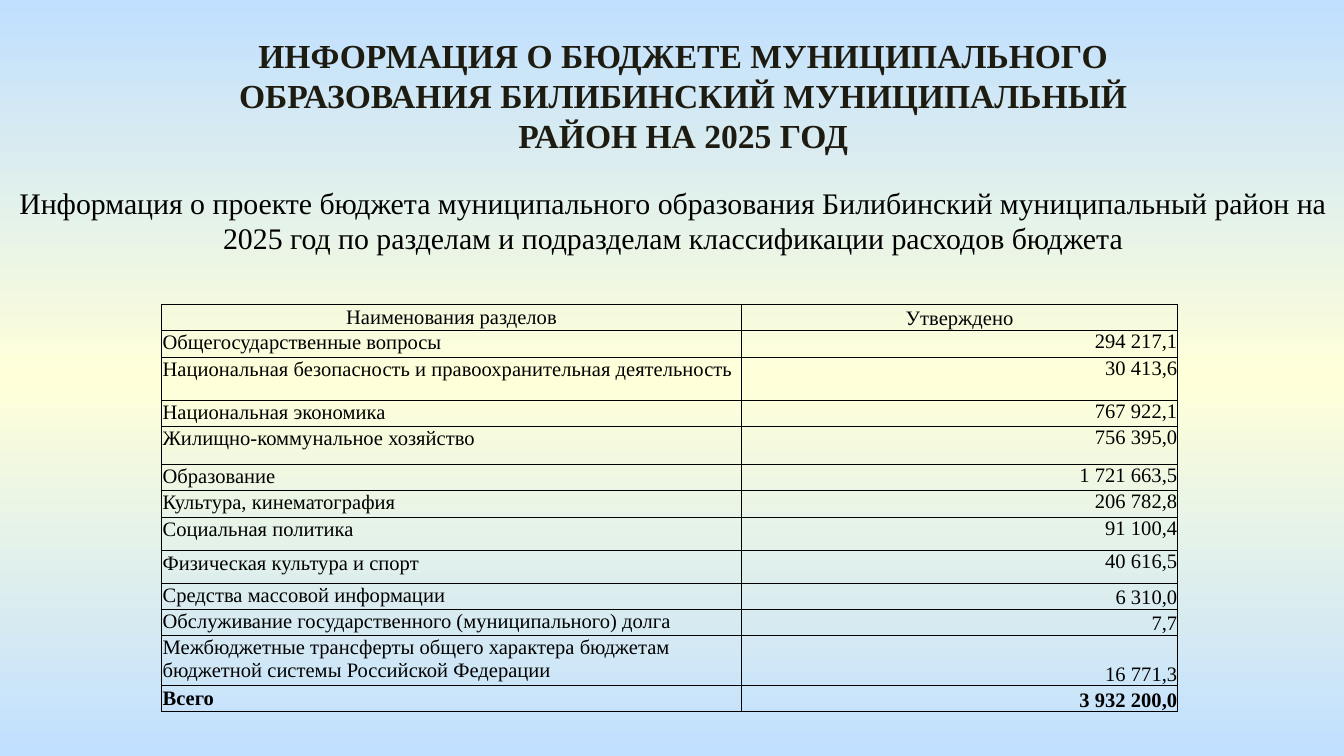
from pptx import Presentation
from pptx.dml.color import RGBColor
from pptx.enum.text import MSO_ANCHOR, MSO_AUTO_SIZE, PP_ALIGN
from pptx.oxml.ns import qn
from pptx.util import Inches, Pt
from lxml import etree

LEFT, MID, RIGHT = PP_ALIGN.LEFT, PP_ALIGN.CENTER, PP_ALIGN.RIGHT
TOP, CORE, BASE = MSO_ANCHOR.TOP, MSO_ANCHOR.MIDDLE, MSO_ANCHOR.BOTTOM
GROW = MSO_AUTO_SIZE.SHAPE_TO_FIT_TEXT
HUES = {"sky": "C1E0FF", "cream": "FFFFD9", "title": "1E1C11", "ink": "000000"}
EDGES = ("a:lnL", "a:lnR", "a:lnT", "a:lnB")

HEADS = ("Наименования разделов", "Утверждено")
ROWS = [
    ("Общегосударственные вопросы", "294 217,1", 0.036, TOP),
    ("Национальная безопасность и правоохранительная деятельность", "30 413,6", 0.057, TOP),
    ("Национальная экономика", "767 922,1", 0.033, TOP),
    ("Жилищно-коммунальное хозяйство", "756 395,0", 0.05, TOP),
    ("Образование", "1 721 663,5", 0.034, TOP),
    ("Культура, кинематография", "206 782,8", 0.036, TOP),
    ("Социальная политика", "91 100,4", 0.044, TOP),
    ("Физическая культура и спорт", "40 616,5", 0.043, TOP),
    ("Средства массовой информации", "6 310,0", 0.034, BASE),
    ("Обслуживание государственного (муниципального) долга", "7,7", 0.033, BASE),
    ("Межбюджетные трансферты общего характера бюджетам бюджетной системы "
     "Российской Федерации", "16 771,3", 0.034, BASE),
    ("Всего", "3 932 200,0", 0.033, BASE),
]


class Deck:
    face = "Times New Roman"

    def __init__(self, wide, high):
        self.prs = Presentation()
        self.prs.slide_width, self.prs.slide_height = Inches(wide), Inches(high)
        self.slide = self.prs.slides.add_slide(self.prs.slide_layouts[6])

    def x(self, share):
        return round(share * self.prs.slide_width)

    def y(self, share):
        return round(share * self.prs.slide_height)

    def back(self, hues):
        fill = self.slide.background.fill
        fill.gradient()
        fill.gradient_angle = 270
        stops = next(self.slide.element.iter(qn("a:gsLst")))
        for old in list(stops):
            stops.remove(old)
        for i, hue in enumerate(hues):
            pos = 100000 * i // (len(hues) - 1)
            stop = etree.SubElement(stops, qn("a:gs"), pos=str(pos))
            etree.SubElement(stop, qn("a:srgbClr"), val=HUES[hue])

    def label(self, frame, text, size, hue="ink", align=MID, bold=False):
        frame.word_wrap = True
        par = frame.paragraphs[0]
        par.text, par.alignment = text, align
        font = par.font
        font.name, font.size, font.bold = self.face, Pt(size), bold
        font.color.rgb = RGBColor.from_string(HUES[hue])

    def text(self, left, top, wide, high, words, size, hue="ink", bold=False):
        box = self.slide.shapes.add_textbox(
            self.x(left), self.y(top), self.x(wide), self.y(high))
        self.label(box.text_frame, words, size, hue, bold=bold)
        box.text_frame.auto_size = GROW

    def cell(self, cell, words, align, anchor, pad, bold=False):
        cell.margin_left = cell.margin_top = cell.margin_right = Inches(pad)
        cell.margin_bottom = 0
        cell.vertical_anchor = anchor
        self.label(cell.text_frame, words, 11, align=align, bold=bold)
        props = cell._tc.get_or_add_tcPr()
        for edge in EDGES:
            line = etree.SubElement(props, qn(edge), w=str(Pt(0.5)))
            fill = etree.SubElement(line, qn("a:solidFill"))
            etree.SubElement(fill, qn("a:srgbClr"), val=HUES["ink"])
        cell.fill.background()

    def table(self, left, top, cols, heads, rows):
        highs = [0.033] + [row[2] for row in rows]
        grid = self.slide.shapes.add_table(
            len(highs), len(cols), self.x(left), self.y(top),
            self.x(sum(cols)), self.y(sum(highs))).table
        grid.first_row = grid.horz_banding = False
        for col, wide in zip(grid.columns, cols):
            col.width = self.x(wide)
        for row, high in zip(grid.rows, highs):
            row.height = self.y(high)
        for i, (head, anchor) in enumerate(zip(heads, (CORE, BASE))):
            self.cell(grid.cell(0, i), head, MID, anchor, 0.01)
        for i, (name, total, _, anchor) in enumerate(rows, 1):
            bold = i == len(rows)
            self.cell(grid.cell(i, 0), name, LEFT, TOP, 0.01, bold)
            self.cell(grid.cell(i, 1), total, RIGHT, anchor, 0, bold)


def main():
    deck = Deck(10, 5.625)
    deck.back(("sky", "cream", "sky"))
    deck.text(0.122, 0.037, 0.773, 0.18,
              "ИНФОРМАЦИЯ О БЮДЖЕТЕ МУНИЦИПАЛЬНОГО ОБРАЗОВАНИЯ БИЛИБИНСКИЙ "
              "МУНИЦИПАЛЬНЫЙ РАЙОН НА 2025 ГОД", 18, "title", True)
    deck.text(0.001, 0.235, 1, 0.114,
              "Информация о проекте бюджета муниципального образования Билибинский "
              "муниципальный район на 2025 год по разделам и подразделам "
              "классификации расходов бюджета", 16)
    deck.table(0.12, 0.402, (0.432, 0.324), HEADS, ROWS)
    deck.prs.save("out.pptx")


if __name__ == "__main__":
    main()
